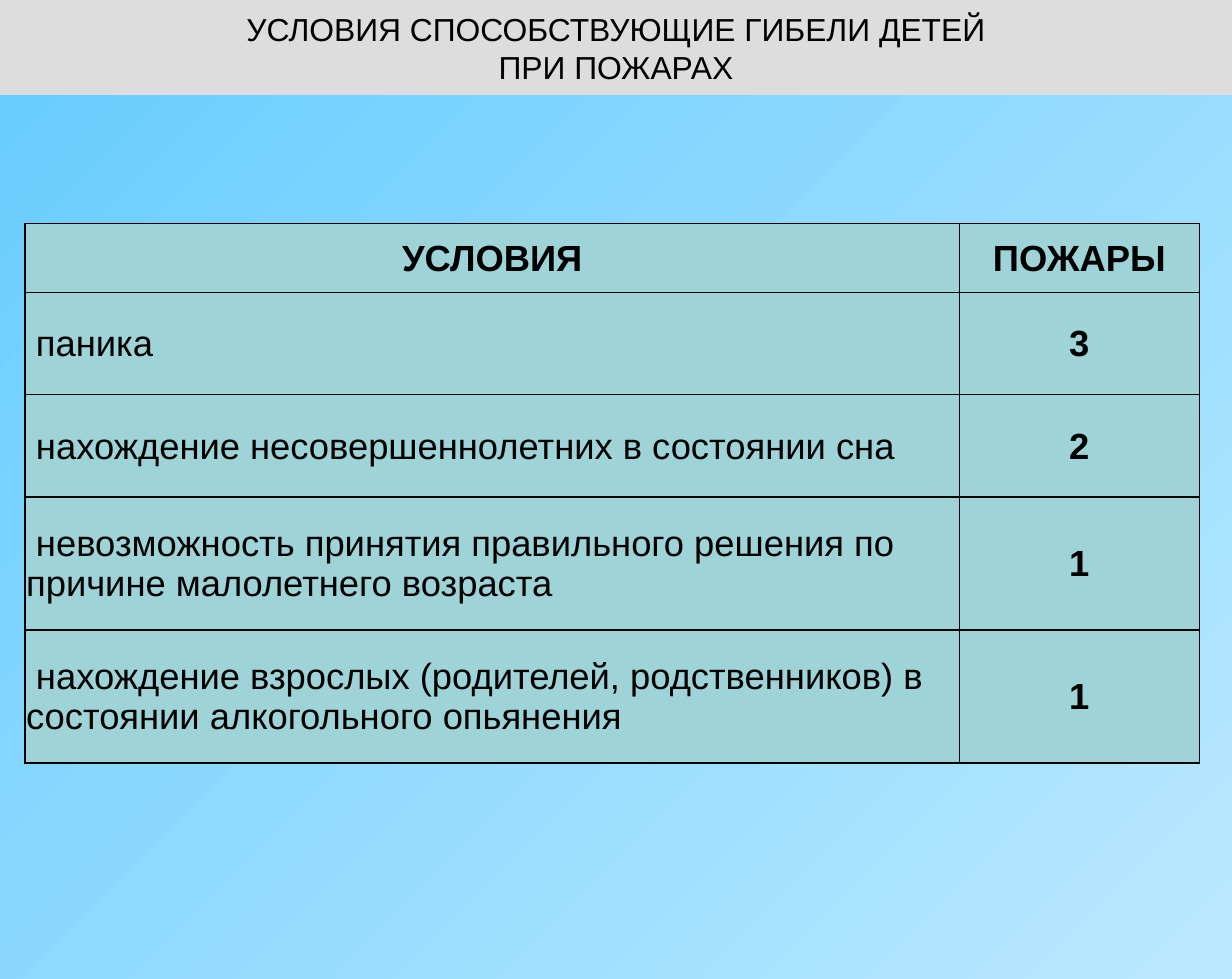
import lxml.etree
import pptx
import pptx.dml.color
import pptx.enum.text
import pptx.oxml.ns
import pptx.util

WIDTH, HEIGHT = 11.3, 8.98
FONT = "Arial"
COLORS = {
    "sky": "66CCFF",
    "pale": "BBE8FF",
    "band": "DDDDDD",
    "cell": "9ED3D7",
    "ink": "000000",
}
TITLE = "УСЛОВИЯ СПОСОБСТВУЮЩИЕ ГИБЕЛИ ДЕТЕЙ\nПРИ ПОЖАРАХ"
ROWS = [
    ("УСЛОВИЯ", "ПОЖАРЫ"),
    ("паника", "3"),
    ("нахождение несовершеннолетних в состоянии сна", "2"),
    ("невозможность принятия правильного решения по причине малолетнего возраста", "1"),
    ("нахождение взрослых (родителей, родственников) в состоянии алкогольного опьянения", "1"),
]
COL_WIDTHS = [8.57, 2.2]
ROW_HEIGHTS = [0.63, 0.94, 0.94, 1.22, 1.22]


def rgb(name):
    """Return the named colour."""
    return pptx.dml.color.RGBColor.from_string(COLORS[name])


def fill_solid(fill, name):
    """Apply a named solid colour to a fill."""
    fill.solid()
    fill.fore_color.rgb = rgb(name)


def format_text(tf, size, bold, centred=True):
    """Format every run and paragraph of a text frame."""
    align = pptx.enum.text.PP_ALIGN
    for p in tf.paragraphs:
        p.alignment = align.CENTER if centred else align.LEFT
        for r in p.runs:
            r.font.name = FONT
            r.font.size = pptx.util.Pt(size)
            r.font.bold = bold
            r.font.color.rgb = rgb("ink")


def set_background(s):
    """Give the slide a diagonal gradient."""
    fill = s.background.fill
    fill.gradient()
    fill.gradient_angle = 315
    for stop, position, name in zip(fill.gradient_stops, (0, 1), ("sky", "pale")):
        stop.position = position
        stop.color.rgb = rgb(name)


def set_title(s):
    """Place the title across the top band."""
    sp = s.shapes.title
    sp.left = sp.top = 0
    sp.width = pptx.util.Inches(WIDTH)
    sp.height = pptx.util.Inches(0.87)
    fill_solid(sp.fill, "band")
    tf = sp.text_frame
    tf.text = TITLE
    tf.word_wrap = True
    tf.auto_size = pptx.enum.text.MSO_AUTO_SIZE.NONE
    tf.vertical_anchor = pptx.enum.text.MSO_ANCHOR.MIDDLE
    tf.margin_left = tf.margin_right = pptx.util.Inches(0.12)
    tf.margin_top = tf.margin_bottom = pptx.util.Inches(0.06)
    format_text(tf, 21, False)


def set_borders(cell):
    """Draw a thin line on all four sides of a cell."""
    tc_pr = cell._tc.get_or_add_tcPr()
    qn = pptx.oxml.ns.qn
    for i, side in enumerate(("a:lnL", "a:lnR", "a:lnT", "a:lnB")):
        ln = lxml.etree.Element(qn(side), w=str(pptx.util.Pt(1)))
        solid = lxml.etree.SubElement(ln, qn("a:solidFill"))
        lxml.etree.SubElement(solid, qn("a:srgbClr"), val=COLORS["ink"])
        tc_pr.insert(i, ln)


def set_cell(cell, text, bold, centred):
    """Fill one table cell with formatted text."""
    cell.text = text
    cell.vertical_anchor = pptx.enum.text.MSO_ANCHOR.MIDDLE
    cell.margin_left = cell.margin_right = cell.margin_top = pptx.util.Inches(0.01)
    cell.margin_bottom = 0
    fill_solid(cell.fill, "cell")
    set_borders(cell)
    format_text(cell.text_frame, 24, bold, centred)
    if not centred:
        p_pr = cell.text_frame.paragraphs[0]._p.get_or_add_pPr()
        p_pr.set("marL", "0")
        p_pr.set("indent", str(pptx.util.Inches(0.09)))


def add_conditions_table(s):
    """Add the table of conditions and fire counts."""
    box = map(pptx.util.Inches, (0.23, 2.05, sum(COL_WIDTHS), sum(ROW_HEIGHTS)))
    table = s.shapes.add_table(len(ROWS), len(COL_WIDTHS), *box).table
    table.horz_banding = False
    for column, width in zip(table.columns, COL_WIDTHS):
        column.width = pptx.util.Inches(width)
    for row, height in zip(table.rows, ROW_HEIGHTS):
        row.height = pptx.util.Inches(height)
    for i, texts in enumerate(ROWS):
        for j, text in enumerate(texts):
            emphasised = i == 0 or j == 1
            set_cell(table.cell(i, j), text, emphasised, emphasised)


def main():
    """Build and save the slide."""
    prs = pptx.Presentation()
    prs.slide_width = pptx.util.Inches(WIDTH)
    prs.slide_height = pptx.util.Inches(HEIGHT)
    s = prs.slides.add_slide(prs.slide_layouts[5])
    set_background(s)
    set_title(s)
    add_conditions_table(s)
    prs.save("out.pptx")


if __name__ == "__main__":
    main()
